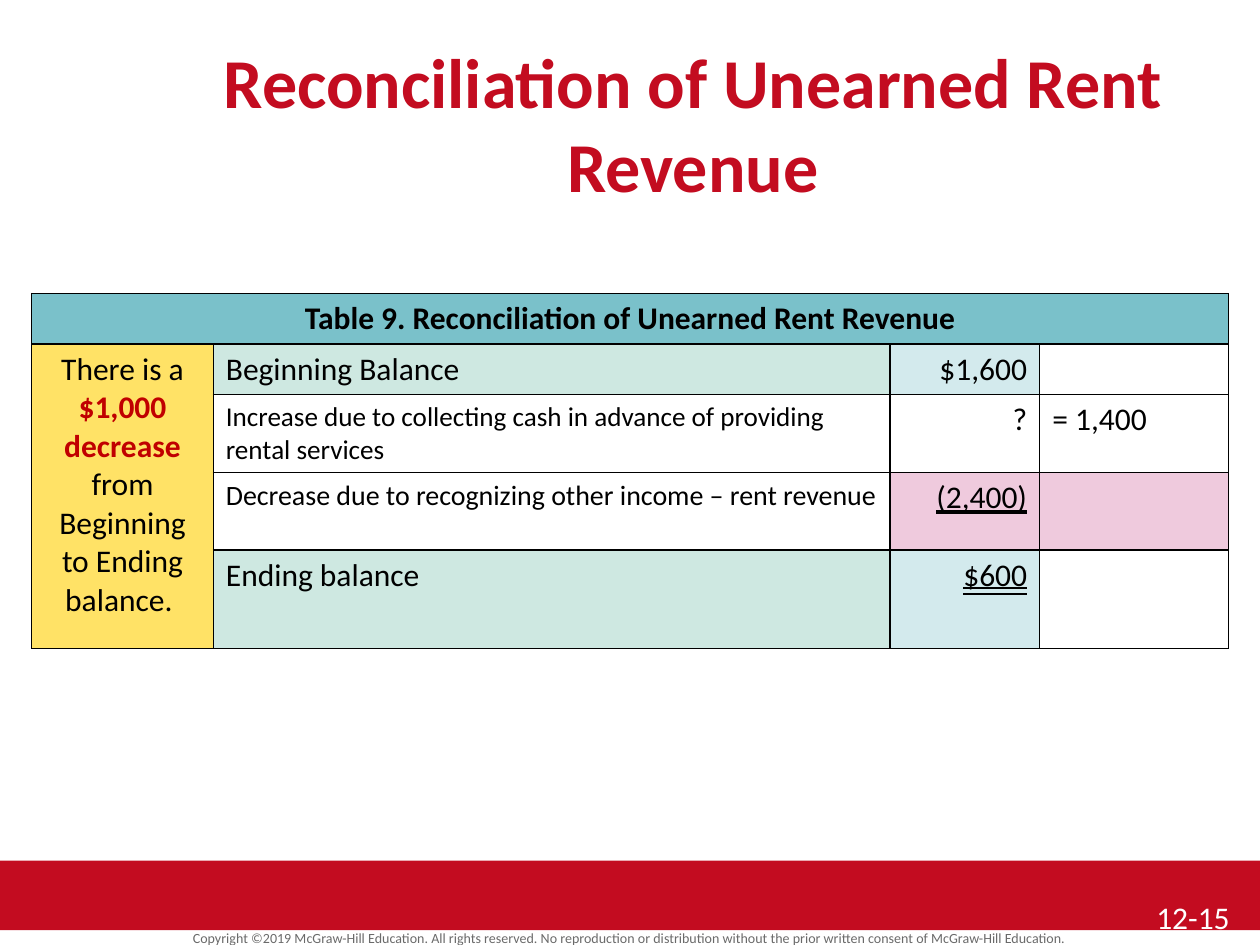
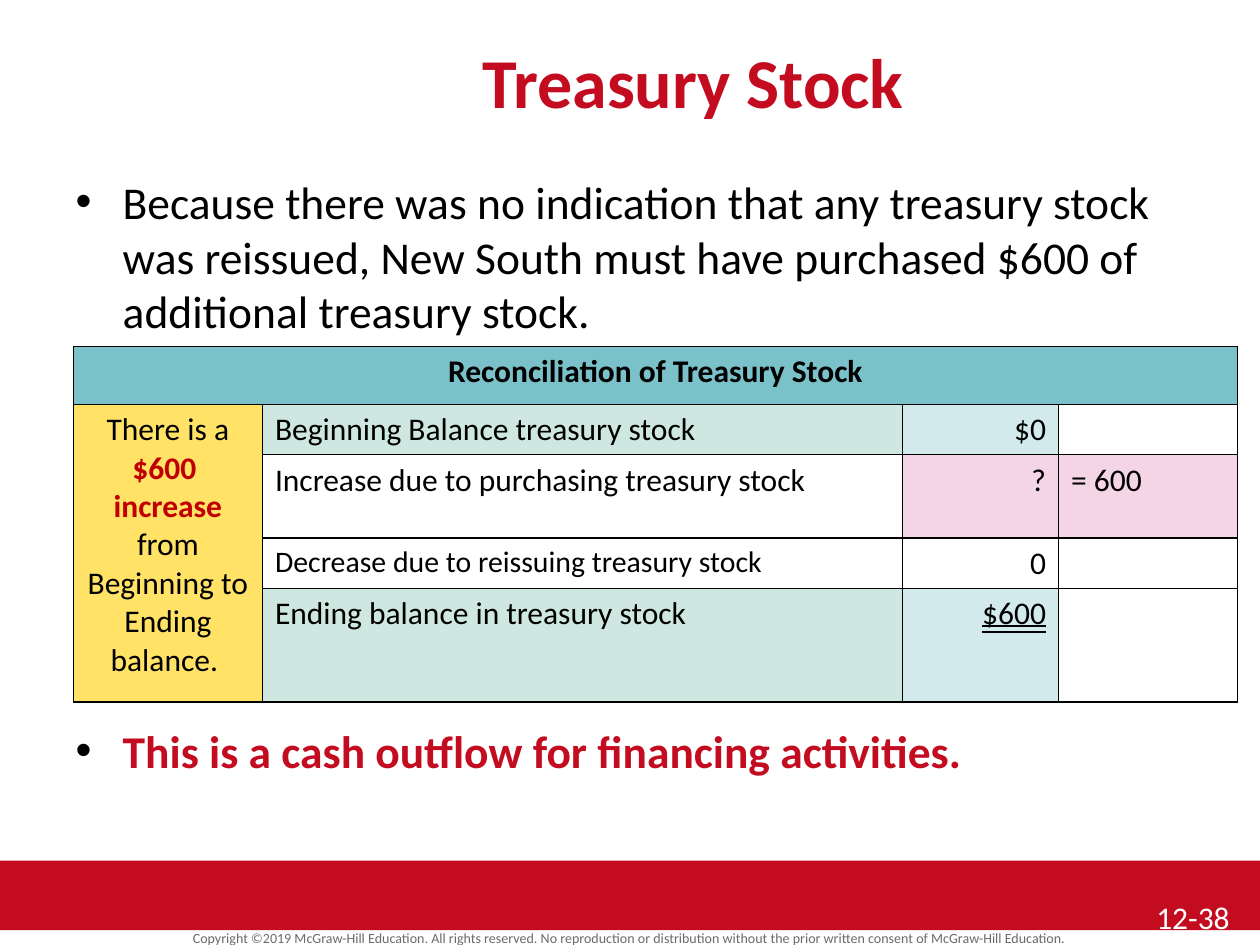
from dataclasses import dataclass

from lxml.etree import SubElement
from pptx import Presentation
from pptx.dml.color import RGBColor
from pptx.enum.shapes import MSO_SHAPE
from pptx.enum.text import MSO_ANCHOR, MSO_AUTO_SIZE, MSO_UNDERLINE, PP_ALIGN
from pptx.oxml import parse_xml
from pptx.oxml.ns import nsdecls, qn
from pptx.util import Cm, Pt


@dataclass(frozen=True)
class Theme:
    font: str = "Calibri"
    red: str = "C30C20"
    change: str = "C00000"
    black: str = "000000"
    white: str = "FFFFFF"
    grey: str = "6A6A6A"
    heading: str = "7AC1CA"
    note: str = "FFE266"
    balance: str = "CEE8E1"
    amount: str = "D3EAED"
    pink: str = "EFCADD"
    light_pink: str = "F3D5E5"
    title_size: float = 40
    body_size: float = 26
    table_size: float = 18
    copyright_size: float = 8


theme = Theme()


def set_font(font, size, color=theme.black, bold=False):
    font.name = theme.font
    font.size = Pt(size)
    font.bold = bold
    font.color.rgb = RGBColor.from_string(color)


def fill_cell(cell, color):
    """Fill a table cell and rule its four sides."""
    if color:
        cell.fill.solid()
        cell.fill.fore_color.rgb = RGBColor.from_string(color)
    else:
        cell.fill.background()
    properties = cell._tc.get_or_add_tcPr()
    for position, side in enumerate(("lnL", "lnR", "lnT", "lnB")):
        properties.insert(position, parse_xml(
            f'<a:{side} {nsdecls("a")} w="12700"><a:solidFill>'
            f'<a:srgbClr val="{theme.black}"/></a:solidFill></a:{side}>'))


# Content: each row is label, label size, amount, underline, answer,
# then the fills of label, amount and answer
single, double = MSO_UNDERLINE.SINGLE_LINE, MSO_UNDERLINE.DOUBLE_LINE
pages = [
    dict(
        title="Reconciliation of Unearned Rent Revenue",
        number="12-15",
        bullets=[],
        corner=(0.64, 5.92),
        widths=(3.66, 13.64, 3.02, 3.81),
        heights=(0.97, 0.97, 1.5, 1.57, 1.98),
        heading="Table 9. Reconciliation of Unearned Rent Revenue",
        note=[[("There is a ", False), ("$1,000 decrease ", True),
               ("from Beginning to Ending balance. ", False)]],
        rows=[
            ("Beginning Balance", 18, "$1,600", None, "",
             (theme.balance, theme.amount, None)),
            ("Increase due to collecting cash in advance of providing rental services",
             15.5, "?", None, "= 1,400", (None, None, None)),
            ("Decrease due to recognizing other income – rent revenue",
             16, "(2,400)", single, "", (None, theme.pink, theme.pink)),
            ("Ending balance", 18, "$600", double, "",
             (theme.balance, theme.amount, None)),
        ],
    ),
    dict(
        title="Treasury Stock",
        number="12-38",
        # text, colour, bold, space before
        bullets=[
            ("Because there was no indication that any treasury stock was reissued, "
             "New South must have purchased $600 of additional treasury stock.",
             theme.black, False, 0),
            ("This is a cash outflow for financing activities.", theme.red, True, 220),
        ],
        corner=(1.48, 6.98),
        widths=(3.81, 12.9, 3.15, 3.61),
        heights=(1.17, 0.97, 1.68, 0.97, 2.29),
        heading="Reconciliation of Treasury Stock",
        note=[[("There is a ", False), ("$600 ", True)],
              [("increase ", True), ("from Beginning to Ending balance. ", False)]],
        rows=[
            ("Beginning Balance treasury stock", 18, "$0", None, "",
             (theme.balance, theme.amount, None)),
            ("Increase due to purchasing treasury stock", 18, "?", None, "= 600",
             (None, theme.light_pink, theme.light_pink)),
            ("Decrease due to reissuing treasury stock", 17, "0", None, "",
             (None, None, None)),
            ("Ending balance in treasury stock", 18, "$600", double, "",
             (theme.balance, theme.amount, None)),
        ],
    ),
]

deck = Presentation()
deck.slide_width, deck.slide_height = Cm(25.4), Cm(19.05)
title_only, title_and_body = deck.slide_layouts[5], deck.slide_layouts[1]

for page in pages:
    slide = deck.slides.add_slide(title_and_body if page["bullets"] else title_only)

    # Red band and copyright line: made once, then moved to the slide master
    if page is pages[0]:
        band = slide.shapes.add_shape(MSO_SHAPE.RECTANGLE, 0, Cm(17.35), Cm(25.4), Cm(1.4))
        band.shadow.inherit = False
        band.fill.solid()
        band.fill.fore_color.rgb = RGBColor.from_string(theme.red)
        band.line.fill.background()

        copyright_line = slide.shapes.add_textbox(0, Cm(18.7), Cm(25.4), Cm(0.48))
        frame = copyright_line.text_frame
        frame.word_wrap = True
        frame.vertical_anchor = MSO_ANCHOR.MIDDLE
        frame.text = ("Copyright ©2019 McGraw-Hill Education. All rights reserved. "
                      "No reproduction or distribution without the prior written "
                      "consent of McGraw-Hill Education.")
        paragraph = frame.paragraphs[0]
        paragraph.alignment = PP_ALIGN.CENTER
        paragraph.line_spacing = 0.8
        set_font(paragraph.font, theme.copyright_size, theme.grey)

        for shared in (band, copyright_line):
            deck.slide_master.shapes.element.append(shared.element)

    # Title
    title = slide.shapes.title
    title.left, title.top, title.width, title.height = Cm(2.54), Cm(0.64), Cm(22.86), Cm(1.7)
    frame = title.text_frame
    frame.text = page["title"]
    frame.word_wrap = True
    frame.auto_size = MSO_AUTO_SIZE.NONE
    frame.vertical_anchor = MSO_ANCHOR.TOP
    frame.paragraphs[0].alignment = PP_ALIGN.CENTER
    set_font(frame.paragraphs[0].font, theme.title_size, theme.red, bold=True)

    # Bullets above and below the table
    if page["bullets"]:
        body = slide.placeholders[1]
        body.left, body.top, body.width, body.height = Cm(1.27), Cm(3.38), Cm(22.86), Cm(13.13)
        frame = body.text_frame
        frame.auto_size = MSO_AUTO_SIZE.NONE
        frame.vertical_anchor = MSO_ANCHOR.TOP
        frame.text = "\n".join(bullet[0] for bullet in page["bullets"])
        for paragraph, (_, color, bold, gap) in zip(frame.paragraphs, page["bullets"]):
            properties = paragraph._p.get_or_add_pPr()
            properties.set("marL", str(Cm(0.95)))
            properties.set("indent", str(-Cm(0.95)))
            bullet_color = SubElement(properties, qn("a:buClr"))
            SubElement(bullet_color, qn("a:srgbClr"), val=theme.black)
            SubElement(properties, qn("a:buFont"), typeface="Arial")
            SubElement(properties, qn("a:buChar"), char="•")
            paragraph.space_before, paragraph.space_after = Pt(gap), Pt(0)
            set_font(paragraph.font, theme.body_size, color, bold)

    # Page number
    number = slide.shapes.add_textbox(Cm(23.06), Cm(17.98), Cm(2.34), Cm(1.07))
    number.text_frame.word_wrap = True
    number.text_frame.text = page["number"]
    set_font(number.text_frame.paragraphs[0].font, theme.table_size, theme.white)

    # Reconciliation table
    left, top = page["corner"]
    table = slide.shapes.add_table(
        len(page["heights"]), len(page["widths"]), Cm(left), Cm(top),
        Cm(sum(page["widths"])), Cm(sum(page["heights"]))).table
    table.first_row = table.horz_banding = False
    for column, width in zip(table.columns, page["widths"]):
        column.width = Cm(width)
    for row, height in zip(table.rows, page["heights"]):
        row.height = Cm(height)

    # Heading across the top, note down the left side
    heading, note = table.cell(0, 0), table.cell(1, 0)
    heading.merge(table.cell(0, 3))
    note.merge(table.cell(4, 0))
    for column in range(4):
        fill_cell(table.cell(0, column), theme.heading)
    heading.text = page["heading"]
    heading.text_frame.paragraphs[0].alignment = PP_ALIGN.CENTER
    set_font(heading.text_frame.paragraphs[0].font, theme.table_size, bold=True)

    for line, pieces in enumerate(page["note"]):
        frame = note.text_frame
        paragraph = frame.add_paragraph() if line else frame.paragraphs[0]
        paragraph.alignment = PP_ALIGN.CENTER
        for text, is_change in pieces:
            run = paragraph.add_run()
            run.text = text
            set_font(run.font, theme.table_size,
                     theme.change if is_change else theme.black, is_change)

    # Balances and changes
    for row, (label, size, amount, underline, answer, fills) in enumerate(page["rows"], 1):
        fill_cell(table.cell(row, 0), theme.note)
        entries = [(label, size, PP_ALIGN.LEFT, None),
                   (amount, theme.table_size, PP_ALIGN.RIGHT, underline),
                   (answer, theme.table_size, PP_ALIGN.LEFT, None)]
        for column, ((text, points, alignment, rule), fill) in enumerate(zip(entries, fills), 1):
            cell = table.cell(row, column)
            fill_cell(cell, fill)
            cell.text = text
            paragraph = cell.text_frame.paragraphs[0]
            paragraph.alignment = alignment
            set_font(paragraph.font, points)
            if rule:
                paragraph.font.underline = rule

deck.save("out.pptx")
